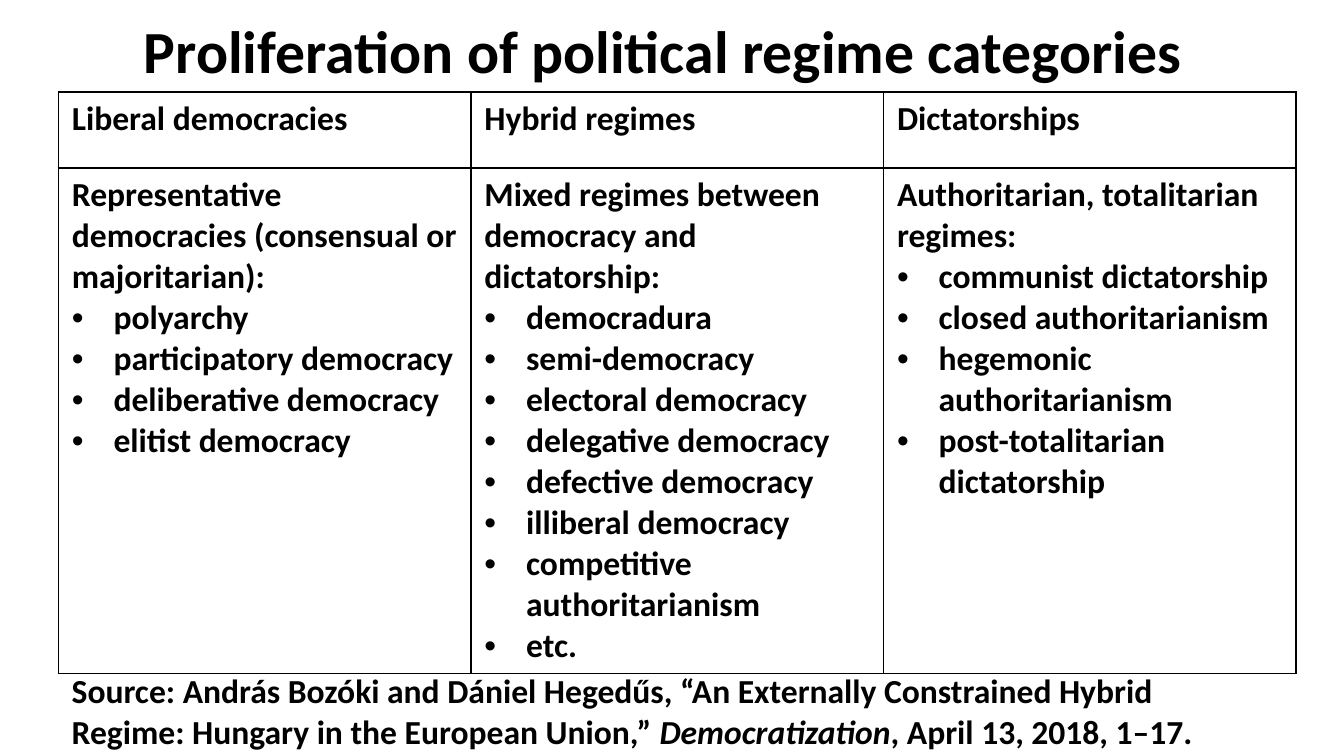
from lxml import etree
from pptx import Presentation
from pptx import util as u
from pptx.dml.color import RGBColor
from pptx.enum import text
from pptx.oxml import ns

BLACK = RGBColor(0, 0, 0)
FONT = "Calibri"
WIDTH = u.Inches(10)
HEIGHT = WIDTH * 9 // 16
COLUMN, ROW = WIDTH / 100, HEIGHT / 100
INDENT = u.Inches(0.31)
HEADER_ROWS = 10

REGIMES = [
    ("Liberal democracies",
     "Representative democracies (consensual or majoritarian):",
     ["polyarchy", "participatory democracy", "deliberative democracy",
      "elitist democracy"]),
    ("Hybrid regimes",
     "Mixed regimes between democracy and dictatorship:",
     ["democradura", "semi-democracy", "electoral democracy",
      "delegative democracy", "defective democracy", "illiberal democracy",
      "competitive authoritarianism", "etc."]),
    ("Dictatorships",
     "Authoritarian, totalitarian regimes:",
     ["communist dictatorship", "closed authoritarianism",
      "hegemonic authoritarianism", "post-totalitarian dictatorship"]),
]
CITATION = [
    ("Source: András Bozóki and Dániel Hegedűs, “An Externally Constrained "
     "Hybrid Regime: Hungary in the European Union,” ", False),
    ("Democratization", True),
    (", April 13, 2018, 1–17.", False),
]


def grid_box(left, top, columns, rows):
    return (int(COLUMN * left), int(ROW * top),
            int(COLUMN * columns), int(ROW * rows))


def add_run(paragraph, wording, size=18, italic=False):
    run = paragraph.add_run()
    run.text = wording
    font = run.font
    font.name, font.size = FONT, u.Pt(size)
    font.bold, font.italic = True, italic
    font.color.rgb = BLACK


def add_bullet(frame, wording):
    paragraph = frame.add_paragraph()
    props = paragraph._p.get_or_add_pPr()
    props.set("marL", str(INDENT))
    props.set("indent", str(-INDENT))
    etree.SubElement(props, ns.qn("a:buFont"), typeface="Arial")
    etree.SubElement(props, ns.qn("a:buChar"), char="•")
    add_run(paragraph, wording)


def outline_cell(cell):
    cell.fill.background()
    props = cell._tc.get_or_add_tcPr()
    for place, side in enumerate(("lnL", "lnR", "lnT", "lnB")):
        border = etree.Element(ns.qn(f"a:{side}"), w=str(u.Pt(1)))
        fill = etree.SubElement(border, ns.qn("a:solidFill"))
        etree.SubElement(fill, ns.qn("a:srgbClr"), val=str(BLACK))
        props.insert(place, border)


def place_title(slide, box):
    title = slide.shapes.title
    title.left, title.top, title.width, title.height = box
    frame = title.text_frame
    frame.word_wrap = True
    frame.auto_size = text.MSO_AUTO_SIZE.NONE
    frame.vertical_anchor = text.MSO_ANCHOR.MIDDLE
    heading = frame.paragraphs[0]
    heading.alignment = text.PP_ALIGN.CENTER
    add_run(heading, "Proliferation of political regime categories", 32)


def place_regimes(slide, box):
    regimes = slide.shapes.add_table(2, len(REGIMES), *box).table
    regimes.first_row = regimes.horz_banding = False
    header, body = regimes.rows
    header.height = int(ROW * HEADER_ROWS)
    body.height = box[3] - header.height
    for column, (category, summary, kinds) in enumerate(REGIMES):
        for row, wording in enumerate((category, summary)):
            cell = regimes.cell(row, column)
            outline_cell(cell)
            add_run(cell.text_frame.paragraphs[0], wording)
        for kind in kinds:
            add_bullet(cell.text_frame, kind)


def place_citation(slide, box):
    frame = slide.shapes.add_textbox(*box).text_frame
    frame.word_wrap = True
    frame.auto_size = text.MSO_AUTO_SIZE.SHAPE_TO_FIT_TEXT
    for wording, italic in CITATION:
        add_run(frame.paragraphs[0], wording, italic=italic)


def main():
    deck = Presentation()
    deck.slide_width, deck.slide_height = WIDTH, HEIGHT
    slide = deck.slides.add_slide(deck.slide_layouts[5])
    place_title(slide, grid_box(4.35, 1, 90, 11.2))
    place_regimes(slide, grid_box(4.35, 12.2, 92.1, 74.2))
    place_citation(slide, grid_box(4.35, 87.8, 91.3, 12.6))
    deck.save("out.pptx")


if __name__ == "__main__":
    main()
